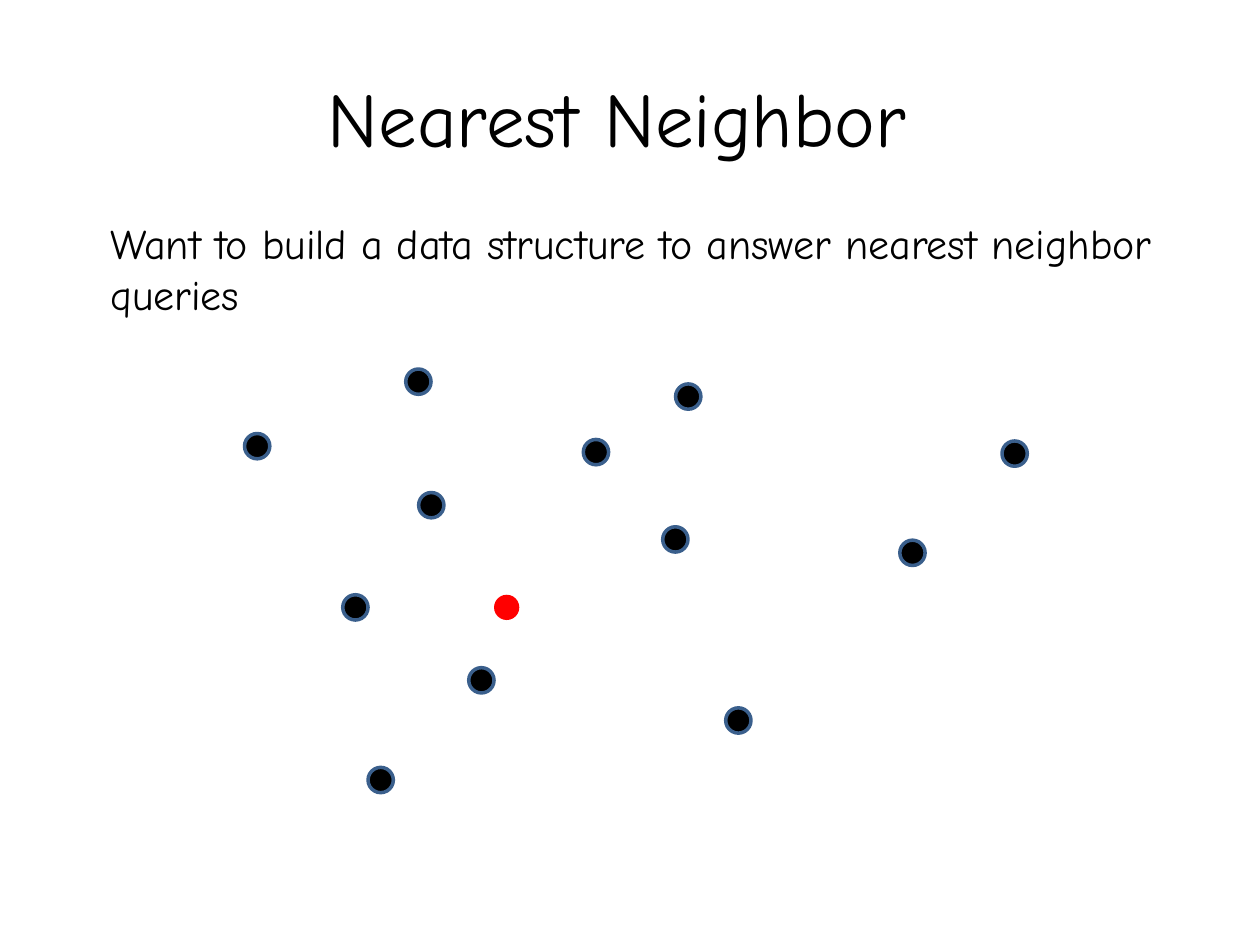
from pptx import Presentation
from pptx.dml.color import RGBColor
from pptx.enum.shapes import MSO_SHAPE as Shape
from pptx.enum.text import MSO_ANCHOR as Anchor, MSO_AUTO_SIZE as AutoSize, PP_ALIGN as Align
from pptx.util import Cm, Pt

FONT = "Comic Neue"
COLORS = {"text": "000000", "point": "000000", "outline": "3A5F8C", "query": "FF0000"}
DOT_SIZE = 0.51

# Top-left corners of the dots, in cm from the corner of the point field
DATA_POINTS = [
    (3.25, 0), (3.51, 2.49), (6.83, 1.42), (8.43, 3.18), (15.27, 1.45), (4.52, 6.02),
    (0, 1.3), (1.98, 4.55), (8.69, 0.3), (9.7, 6.83), (13.21, 3.45), (2.49, 8.03),
]
QUERY_POINT = (5.03, 4.55)


def color(name):
    return RGBColor.from_string(COLORS[name])


def write(shape, text, size, align):
    paragraph = shape.text_frame.paragraphs[0]
    paragraph.text = text
    paragraph.alignment = align
    paragraph.font.name = FONT
    paragraph.font.size = Pt(size)
    paragraph.font.color.rgb = color("text")


def add_title(slide, left, top, width, height):
    title = slide.shapes.title
    title.left, title.top, title.width, title.height = map(Cm, (left, top, width, height))
    title.text_frame.vertical_anchor = Anchor.MIDDLE
    write(title, "Nearest Neighbor ", 44, Align.CENTER)


def add_statement(slide, left, top, width, height):
    box = slide.shapes.add_textbox(*map(Cm, (left, top, width, height)))
    box.text_frame.word_wrap = True
    box.text_frame.auto_size = AutoSize.SHAPE_TO_FIT_TEXT
    write(box, "Want to build a data structure to answer nearest neighbor queries", 24, Align.LEFT)


def add_dot(shapes, left, top, fill, outline=None):
    dot = shapes.add_shape(Shape.OVAL, *map(Cm, (left, top, DOT_SIZE, DOT_SIZE)))
    dot.shadow.inherit = False
    dot.fill.solid()
    dot.fill.fore_color.rgb = color(fill)
    if outline:
        dot.line.color.rgb = color(outline)
        dot.line.width = Pt(2)
    else:
        dot.line.fill.background()


def add_point_field(slide, left, top):
    """Draw the grouped data points and, on top, the query point."""
    group = slide.shapes.add_group_shape()
    for x, y in DATA_POINTS:
        add_dot(group.shapes, left + x, top + y, "point", "outline")
    x, y = QUERY_POINT
    add_dot(slide.shapes, left + x, top + y, "query")


def main():
    presentation = Presentation()
    presentation.slide_width, presentation.slide_height = Cm(25.4), Cm(19.05)
    slide = presentation.slides.add_slide(presentation.slide_layouts.get_by_name("Title Only"))
    add_title(slide, 1.27, 0.76, 22.86, 3.18)
    add_statement(slide, 1.98, 4.27, 23.19, 2.31)
    add_point_field(slide, 4.93, 7.44)
    presentation.save("out.pptx")


if __name__ == "__main__":
    main()
